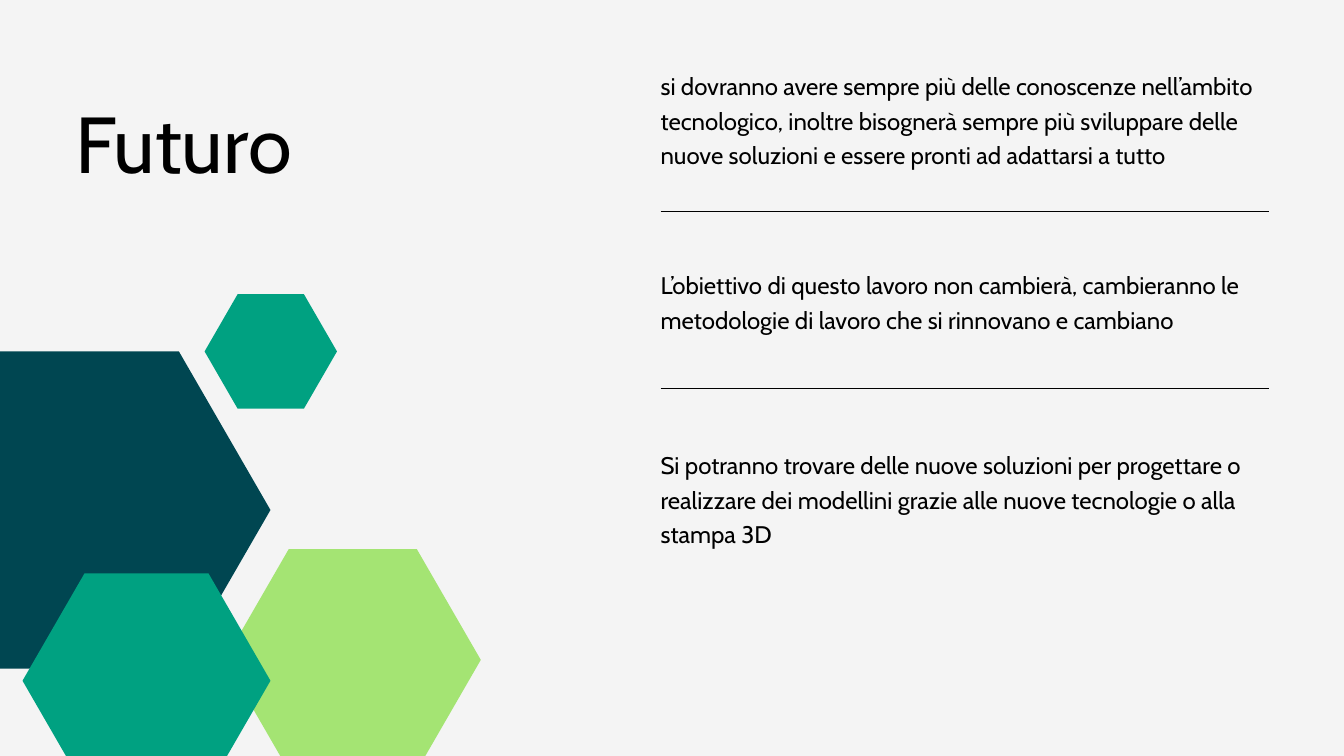
import math
from dataclasses import dataclass

import pptx
import pptx.dml.color
import pptx.enum.shapes
import pptx.enum.text
import pptx.oxml
import pptx.oxml.ns
import pptx.util


@dataclass(frozen=True)
class Theme:
    font: str = "Cabin"
    background: str = "F4F4F4"
    ink: str = "000000"
    navy: str = "004651"
    teal: str = "00A181"
    lime: str = "A4E473"
    title_size: float = 85
    body_size: float = 25.7
    line_spacing: float = 1.2
    rule_width: float = 0.75


@dataclass(frozen=True)
class Block:
    text: str
    row: float
    rows: float


@dataclass(frozen=True)
class Hexagon:
    col: float  # centre
    row: float  # centre
    cols: float  # width
    color: str


THEME = Theme()
COLS, ROWS = 20, 11.25  # square grid cells, one inch each
UNIT = pptx.util.Inches(1)
TEXT_COL, TEXT_COLS = 9.83, 9.05

BLOCKS = [
    Block("si dovranno avere sempre più delle conoscenze nell’ambito tecnologico, "
          "inoltre bisognerà sempre più sviluppare delle nuove soluzioni e essere "
          "pronti ad adattarsi a tutto", 0.98, 2.06),
    Block("L’obiettivo di questo lavoro non cambierà, cambieranno le metodologie "
          "di lavoro che si rinnovano e cambiano", 3.94, 1.03),
    Block("Si potranno trovare delle nuove soluzioni per progettare o realizzare dei "
          "modellini grazie alle nuove tecnologie o alla stampa 3D", 6.62, 1.55),
]
RULE_ROWS = [3.14, 5.78]
HEXAGONS = [
    Hexagon(1.3, 7.59, 5.45, THEME.navy),
    Hexagon(5.25, 9.82, 3.81, THEME.lime),
    Hexagon(4.03, 5.23, 1.97, THEME.teal),
    Hexagon(2.18, 10.13, 3.69, THEME.teal),
]


def grid(cells: float) -> int:
    return round(cells * UNIT)


def rgb(color: str) -> pptx.dml.color.RGBColor:
    return pptx.dml.color.RGBColor.from_string(color)


def fill_placeholder(sp, text: str, box: tuple, size: float) -> None:
    sp.left, sp.top, sp.width, sp.height = map(grid, box)
    tf = sp.text_frame
    tf.text = text
    tf.word_wrap = True
    tf.auto_size = pptx.enum.text.MSO_AUTO_SIZE.NONE
    tf.vertical_anchor = pptx.enum.text.MSO_ANCHOR.TOP
    tf.margin_left = tf.margin_top = tf.margin_right = tf.margin_bottom = 0
    p = tf.paragraphs[0]
    p.alignment = pptx.enum.text.PP_ALIGN.LEFT
    p.line_spacing = THEME.line_spacing
    p.space_before = p.space_after = pptx.util.Pt(0)
    # No bullet and no hanging indent
    pPr = p._p.get_or_add_pPr()
    pPr.set("marL", "0")
    pPr.set("indent", "0")
    pPr.append(pptx.oxml.parse_xml(f"<a:buNone {pptx.oxml.ns.nsdecls('a')}/>"))
    font = p.runs[0].font
    font.name, font.size, font.bold = THEME.font, pptx.util.Pt(size), False
    font.color.rgb = rgb(THEME.ink)


def draw_hexagon(slide, h: Hexagon) -> None:
    rows = h.cols * math.sqrt(3) / 2
    sp = slide.shapes.add_shape(
        pptx.enum.shapes.MSO_SHAPE.HEXAGON,
        grid(h.col - h.cols / 2), grid(h.row - rows / 2), grid(h.cols), grid(rows))
    sp.adjustments[0] = h.cols / 4 / rows  # regular hexagon
    sp.shadow.inherit = False
    sp.fill.solid()
    sp.fill.fore_color.rgb = rgb(h.color)
    sp.line.fill.background()


def draw_rule(slide, row: float) -> None:
    line = slide.shapes.add_connector(
        pptx.enum.shapes.MSO_CONNECTOR.STRAIGHT,
        grid(TEXT_COL), grid(row), grid(TEXT_COL + TEXT_COLS), grid(row))
    line.line.color.rgb = rgb(THEME.ink)
    line.line.width = pptx.util.Pt(THEME.rule_width)
    line._element.spPr.append(
        pptx.oxml.parse_xml(f"<a:effectLst {pptx.oxml.ns.nsdecls('a')}/>"))


def main() -> None:
    prs = pptx.Presentation()
    prs.slide_width, prs.slide_height = grid(COLS), grid(ROWS)
    slide = prs.slides.add_slide(prs.slide_layouts.get_by_name("Comparison"))
    slide.background.fill.solid()
    slide.background.fill.fore_color.rgb = rgb(THEME.background)

    # Title and three text blocks; the layout's fourth body is not needed
    title, *bodies = slide.placeholders
    fill_placeholder(title, "Futuro", (1.12, 1.12, 6.03, 1.41), THEME.title_size)
    for sp, block in zip(bodies, BLOCKS):
        fill_placeholder(sp, block.text, (TEXT_COL, block.row, TEXT_COLS, block.rows),
                         THEME.body_size)
    for sp in bodies[len(BLOCKS):]:
        sp._element.getparent().remove(sp._element)

    # Hexagon cluster
    for h in HEXAGONS:
        draw_hexagon(slide, h)

    # Rules between the text blocks
    for row in RULE_ROWS:
        draw_rule(slide, row)

    prs.save("out.pptx")


if __name__ == "__main__":
    main()
